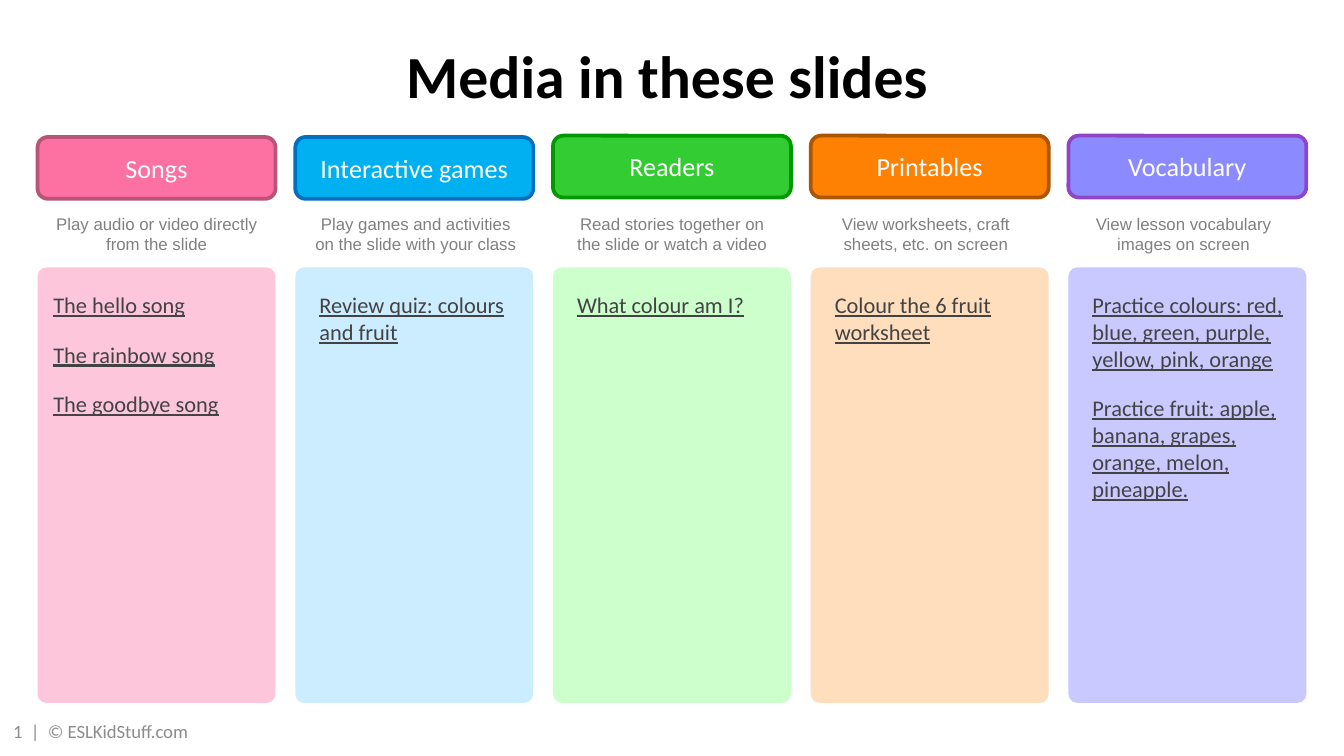
from pptx import Presentation
from pptx.dml.color import RGBColor
from pptx.enum.shapes import MSO_SHAPE
from pptx.enum.text import MSO_ANCHOR, MSO_AUTO_SIZE, PP_ALIGN
from pptx.util import Inches, Pt

ROUND = MSO_SHAPE.ROUNDED_RECTANGLE
TOP, MID = MSO_ANCHOR.TOP, MSO_ANCHOR.MIDDLE
LEFT, CENTER = PP_ALIGN.LEFT, PP_ALIGN.CENTER
FIXED = MSO_AUTO_SIZE.NONE

BLACK = RGBColor(0x00, 0x00, 0x00)
WHITE = RGBColor(0xFF, 0xFF, 0xFF)
DARK = RGBColor(0x43, 0x43, 0x43)
GREY = RGBColor(0x80, 0x80, 0x80)
PALE = RGBColor(0x8C, 0x8C, 0x8C)

TITLE = "Media in these slides"
FOOTER = "1  |  © ESLKidStuff.com"
COLUMNS = [
    dict(name="Songs", hint="Play audio or video directly from the slide",
         items=["The hello song", "The rainbow song", "The goodbye song"],
         fill=RGBColor(0xFC, 0x70, 0xA2), edge=RGBColor(0xBA, 0x53, 0x78),
         tint=RGBColor(0xFE, 0xC6, 0xDA), top=1.02, shift=0.03, pad=0.1),
    dict(name="Interactive games",
         hint="Play games and activities on the slide with your class",
         items=["Review quiz: colours and fruit"],
         fill=RGBColor(0x00, 0xB0, 0xF0), edge=RGBColor(0x00, 0x70, 0xC0),
         tint=RGBColor(0xCC, 0xEC, 0xFF), top=1.02, shift=0.04, pad=0.16),
    dict(name="Readers",
         hint="Read stories together on the slide or watch a video",
         items=["What colour am I?"],
         fill=RGBColor(0x33, 0xCC, 0x33), edge=RGBColor(0x00, 0x99, 0x00),
         tint=RGBColor(0xCC, 0xFF, 0xCC), top=1.01, shift=0.03, pad=0.16),
    dict(name="Printables", hint="View worksheets, craft sheets, etc. on screen",
         items=["Colour the 6 fruit worksheet"],
         fill=RGBColor(0xFF, 0x81, 0x04), edge=RGBColor(0xAC, 0x56, 0x00),
         tint=RGBColor(0xFF, 0xDE, 0xBD), top=1.01, shift=0, pad=0.16),
    dict(name="Vocabulary", hint="View lesson vocabulary images on screen",
         items=["Practice colours: red, blue, green, purple, yellow, pink, orange",
                "Practice fruit: apple, banana, grapes, orange, melon, pineapple."],
         fill=RGBColor(0x8B, 0x8B, 0xFF), edge=RGBColor(0x8F, 0x45, 0xC7),
         tint=RGBColor(0xC9, 0xC9, 0xFF), top=1.01, shift=0, pad=0.16),
]
FIRST, LAST, WIDTH = 0.28, 7.95, 1.77
STEP = (LAST - FIRST) / (len(COLUMNS) - 1)


def box(*sizes):
    return [Inches(size) for size in sizes]


def write(shape, *lines, size, color, font="Calibri", bold=False, under=False,
          align=CENTER, anchor=TOP, after=0, pad=(0.1, 0.05)):
    frame = shape.text_frame
    frame.word_wrap = True
    frame.auto_size = FIXED
    frame.vertical_anchor = anchor
    frame.margin_left, frame.margin_top = box(*pad)
    frame.margin_right, frame.margin_bottom = box(0.1, 0.05)
    for i, line in enumerate(lines):
        para = frame.paragraphs[0] if i == 0 else frame.add_paragraph()
        para.alignment = align
        para.space_before, para.space_after = Pt(0), Pt(after)
        run = para.add_run()
        run.text = line
        run.font.name, run.font.size = font, Pt(size)
        run.font.bold, run.font.underline = bold, under
        run.font.color.rgb = color


def card(shapes, place, fill, edge=None):
    shape = shapes.add_shape(ROUND, *box(*place))
    shape.shadow.inherit = False
    shape.fill.solid()
    shape.fill.fore_color.rgb = fill
    if edge is None:
        shape.line.fill.background()
    else:
        shape.line.color.rgb = edge
        shape.line.width = Pt(2)
    return shape


def main():
    deck = Presentation()
    deck.slide_width = Inches(10)
    deck.slide_height = Inches(10 * 9 / 16)
    slide = deck.slides.add_slide(deck.slide_layouts[5])
    shapes = slide.shapes

    title = shapes.title
    title.left, title.top, title.width, title.height = box(0.34, 0.24, 9.25, 0.54)
    write(title, TITLE, size=32, color=BLACK, bold=True)

    foot = shapes.add_textbox(*box(0, 5.29, 2.17, 0.3))
    write(foot, FOOTER, size=10, color=PALE, align=LEFT, anchor=MID)

    for i, col in enumerate(COLUMNS):
        x = FIRST + i * STEP
        panel = card(shapes, (x, 1.99, WIDTH, 3.24), col["tint"])
        panel.adjustments[0] = 0.037
        write(panel, *col["items"], size=12, color=DARK, under=True,
              align=LEFT, after=12, pad=(col["pad"], 0.16))
        head = card(shapes, (x, col["top"], WIDTH, 0.46), col["fill"], col["edge"])
        write(head, col["name"], size=14, color=WHITE, anchor=MID)
        hint = shapes.add_textbox(*box(x + col["shift"], 1.54, 1.71, 0.4))
        write(hint, col["hint"], size=9, color=GREY, font="Arial")

    deck.save("out.pptx")


if __name__ == "__main__":
    main()
